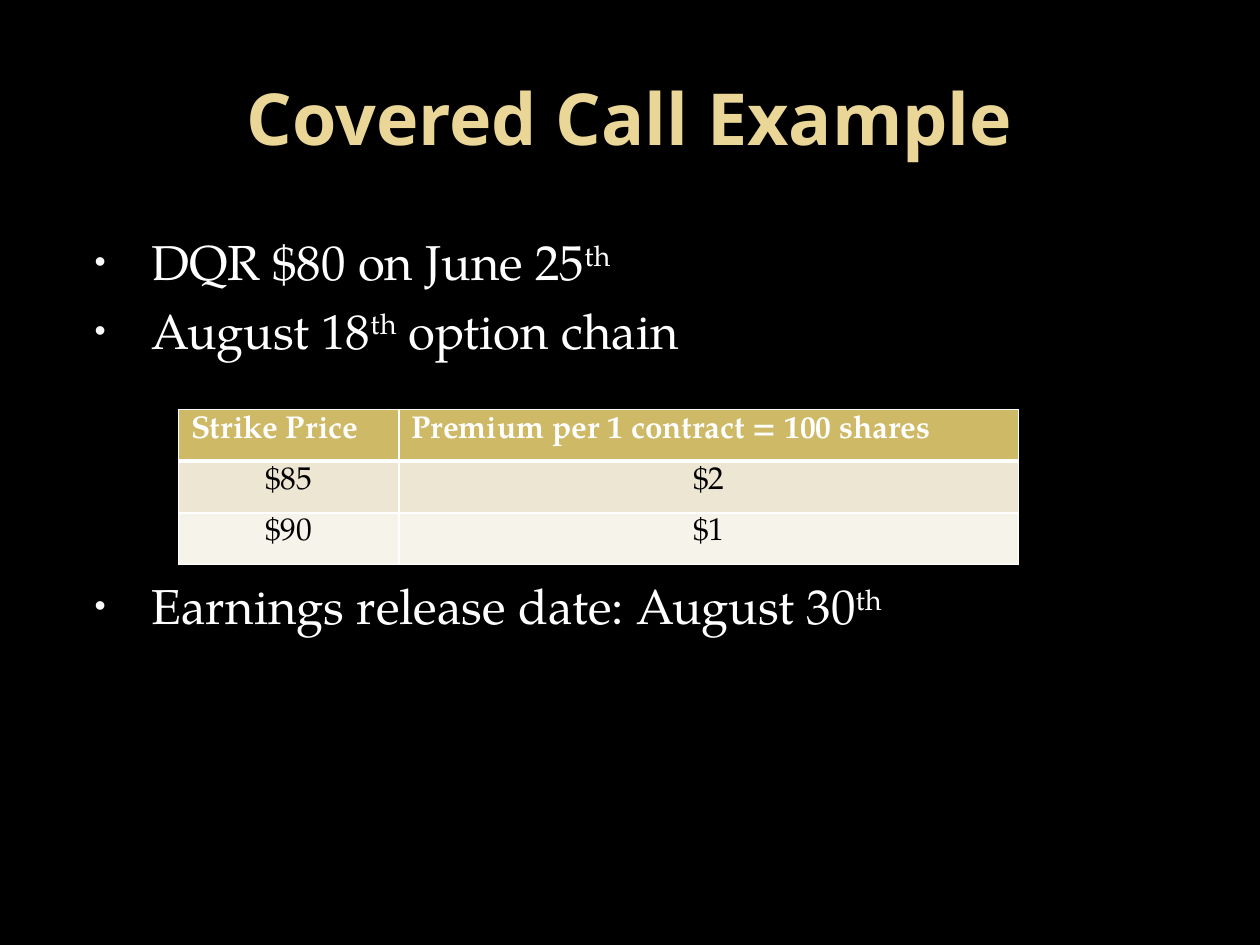
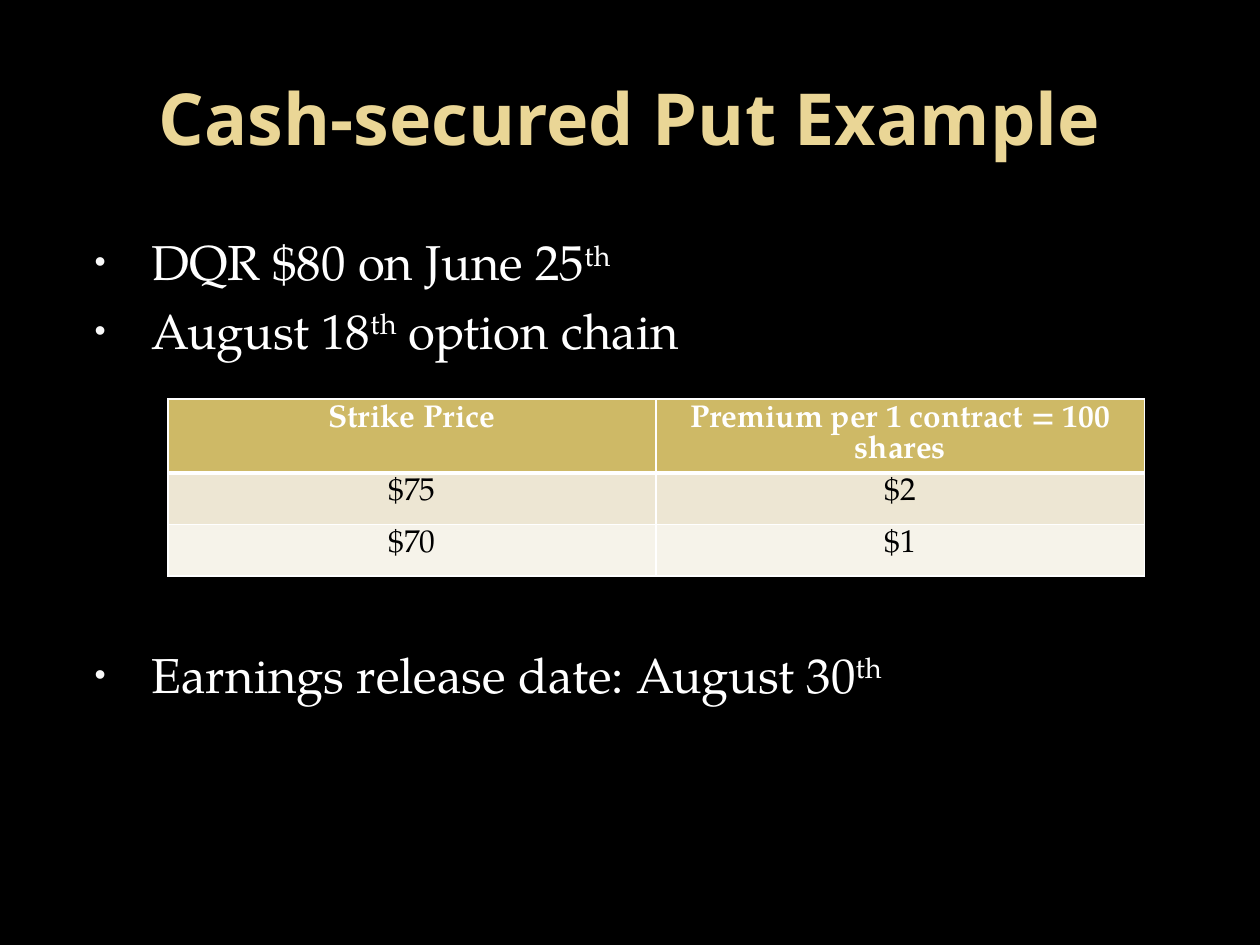
from dataclasses import dataclass

from lxml import etree
from pptx import Presentation
from pptx import util as u
from pptx.dml.color import RGBColor
from pptx.enum import text
from pptx.oxml.ns import qn


@dataclass(frozen=True)
class Theme:
    background: str = "000000"
    title: str = "EAD696"
    light: str = "FFFFFF"
    dark: str = "000000"
    bullet: str = "F9F9F9"
    header: str = "CEB966"
    bands: tuple[str, ...] = ("EDE6D3", "F6F3EA")
    title_font: str = "Open Sans"
    body_font: str = "TeX Gyre Pagella"
    title_size: float = 41
    body_size: float = 28
    table_size: float = 18
    body_line: float = 36.5
    body_gap: float = 2.8
    table_line: float = 17.5


@dataclass(frozen=True)
class Box:
    col: float
    row: float
    cols: float
    rows: float


@dataclass(frozen=True)
class OptionTable:
    col: float
    row: float
    widths: tuple[float, ...]
    header_align: text.PP_ALIGN
    quotes: tuple[tuple[str, str], ...]


@dataclass(frozen=True)
class Example:
    title: str
    body_rows: float
    skipped_lines: int
    table: OptionTable


THEME = Theme()
SLIDE_W, SLIDE_H = u.Inches(10), u.Inches(7.5)
COL, ROW = SLIDE_W / 120, SLIDE_H / 90
TABLE_ROW = 4.92
TITLE_BOX = Box(6, 3.6, 108, 15)
HEADERS = ("Strike Price", "Premium per 1 contract = 100 shares")
FACTS = (
    "DQR $80 on June 25^th",
    "August 18^th^ option chain",
    "Earnings release date: August 30^th",
)
EXAMPLES = (
    Example("Covered Call Example", 64, 3,
            OptionTable(17, 39, (21, 59), text.PP_ALIGN.LEFT,
                        (("$85", "$2"), ("$90", "$1")))),
    Example("Cash-secured Put Example", 61.8, 4,
            OptionTable(16, 38, (46.5, 46.5), text.PP_ALIGN.CENTER,
                        (("$75", "$2"), ("$70", "$1")))),
)


def rgb(value: str) -> RGBColor:
    return RGBColor.from_string(value)


def place(sp, box: Box) -> None:
    sp.left, sp.top = round(box.col * COL), round(box.row * ROW)
    sp.width, sp.height = round(box.cols * COL), round(box.rows * ROW)


def write(p, content: str, *, font: str, size: float, color: str,
          bold: bool = False, align=text.PP_ALIGN.LEFT,
          line: float | None = None, before: float = 0) -> None:
    p.alignment = align
    p.space_before = u.Pt(before)
    if line:
        p.line_spacing = u.Pt(line)
    for i, part in enumerate(content.split("^")):
        r = p.add_run()
        r.text = part
        r.font.name, r.font.size, r.font.bold = font, u.Pt(size), bold
        r.font.color.rgb = rgb(color)
        if i % 2:
            r.font._element.set("baseline", "30000")


def add_bullet(p) -> None:
    pPr = p._p.get_or_add_pPr()
    pPr.set("marL", str(u.Inches(0.6)))
    pPr.set("indent", str(u.Inches(-0.45)))
    color = etree.SubElement(pPr, qn("a:buClr"))
    etree.SubElement(color, qn("a:srgbClr"), val=THEME.bullet)
    etree.SubElement(pPr, qn("a:buSzPct"), val="65000")
    etree.SubElement(pPr, qn("a:buFont"), typeface="Arial")
    etree.SubElement(pPr, qn("a:buChar"), char="•")


def add_borders(cell, bottom: float) -> None:
    tcPr = cell._tc.get_or_add_tcPr()
    for side, width in (("L", 1), ("R", 1), ("T", 1), ("B", bottom)):
        ln = etree.SubElement(tcPr, qn(f"a:ln{side}"), w=str(u.Pt(width)))
        fill = etree.SubElement(ln, qn("a:solidFill"))
        etree.SubElement(fill, qn("a:srgbClr"), val=THEME.light)


def draw_title(s, title: str) -> None:
    sp = s.shapes.title
    place(sp, TITLE_BOX)
    tf = sp.text_frame
    tf.auto_size = text.MSO_AUTO_SIZE.NONE
    tf.vertical_anchor = text.MSO_ANCHOR.MIDDLE
    write(tf.paragraphs[0], title, font=THEME.title_font, size=THEME.title_size,
          color=THEME.title, bold=True, align=text.PP_ALIGN.CENTER)


def draw_facts(s, example: Example) -> None:
    sp = s.placeholders[1]
    place(sp, Box(6, 21, 108, example.body_rows))
    tf = sp.text_frame
    tf.auto_size = text.MSO_AUTO_SIZE.NONE
    pitch = THEME.body_line + THEME.body_gap
    gaps = (0, THEME.body_gap, THEME.body_gap + example.skipped_lines * pitch)
    for i, (fact, gap) in enumerate(zip(FACTS, gaps)):
        p = tf.add_paragraph() if i else tf.paragraphs[0]
        write(p, fact, font=THEME.body_font, size=THEME.body_size,
              color=THEME.light, line=THEME.body_line, before=gap)
        add_bullet(p)


def draw_table(s, spec: OptionTable) -> None:
    rows = (HEADERS, *spec.quotes)
    frame = s.shapes.add_table(
        len(rows), len(HEADERS), round(spec.col * COL), round(spec.row * ROW),
        round(sum(spec.widths) * COL), round(len(rows) * TABLE_ROW * ROW))
    table = frame.table
    table.horz_banding = False
    for column, width in zip(table.columns, spec.widths):
        column.width = round(width * COL)
    for i, values in enumerate(rows):
        head = i == 0
        table.rows[i].height = round(TABLE_ROW * ROW)
        for j, value in enumerate(values):
            cell = table.cell(i, j)
            add_borders(cell, 3 if head else 1)
            cell.fill.solid()
            cell.fill.fore_color.rgb = rgb(
                THEME.header if head else THEME.bands[(i - 1) % len(THEME.bands)])
            write(cell.text_frame.paragraphs[0], value, font=THEME.body_font,
                  size=THEME.table_size, line=THEME.table_line, bold=head,
                  color=THEME.light if head else THEME.dark,
                  align=spec.header_align if head else text.PP_ALIGN.CENTER)


def main() -> None:
    prs = Presentation()
    prs.slide_width, prs.slide_height = SLIDE_W, SLIDE_H
    background = prs.slide_master.background.fill
    background.solid()
    background.fore_color.rgb = rgb(THEME.background)
    for example in EXAMPLES:
        s = prs.slides.add_slide(prs.slide_layouts[1])
        draw_title(s, example.title)
        draw_facts(s, example)
        draw_table(s, example.table)
    prs.save("out.pptx")


if __name__ == "__main__":
    main()
